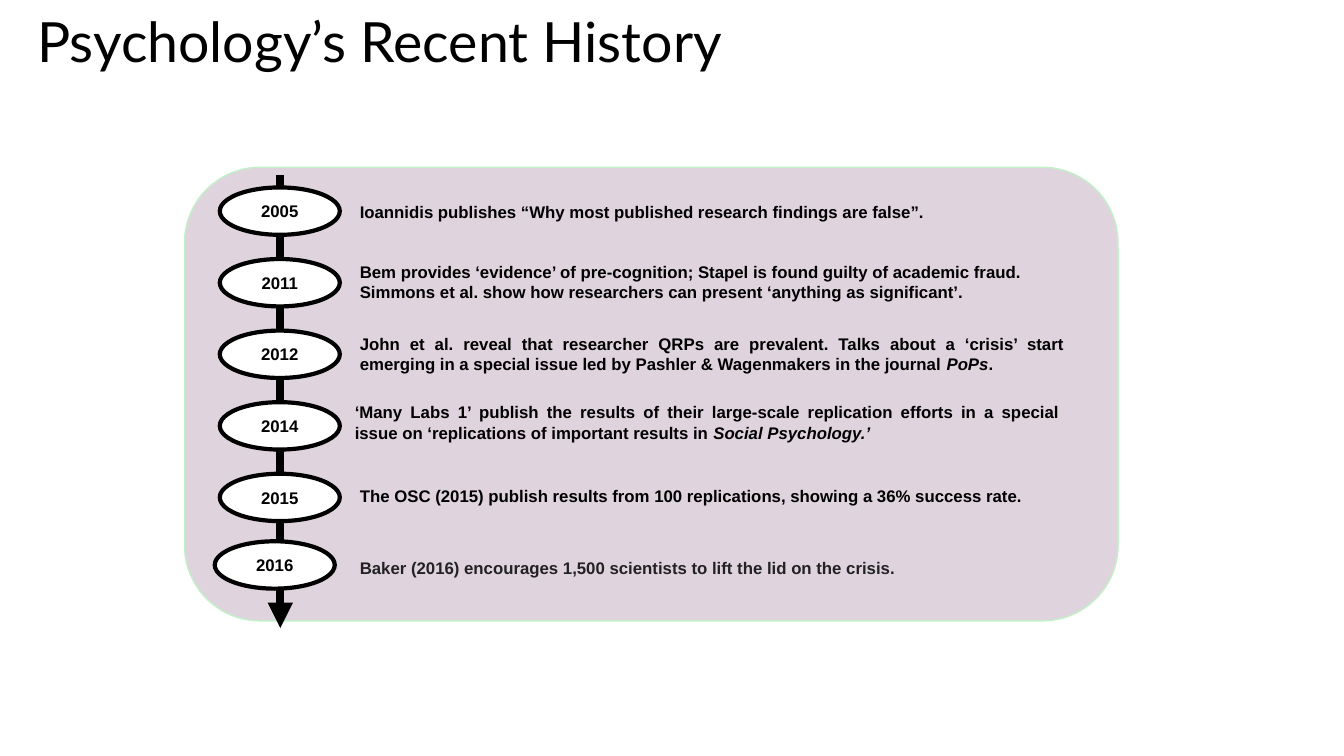
from dataclasses import dataclass

from lxml.etree import SubElement
from pptx import Presentation
from pptx.dml.color import RGBColor
from pptx.enum.shapes import MSO_CONNECTOR as CONNECTOR, MSO_SHAPE as SHAPE
from pptx.enum.text import MSO_ANCHOR as ANCHOR, PP_ALIGN as ALIGN
from pptx.oxml.ns import qn
from pptx.util import Pt

PX = 9144  # EMU per px, 100 px to the inch


@dataclass(frozen=True)
class Theme:
    ink: str = "000000"
    soft_ink: str = "222222"
    white: str = "FFFFFF"
    panel: str = "DFD3DD"
    panel_edge: str = "C2F1C8"
    title_font: str = "Lato"
    body_font: str = "Arial"
    title_size: float = 39.6
    body_size: float = 12


THEME = Theme()
FIRST_YEAR_TOP, YEAR_PITCH = 186, 71
YEAR_LEFT, YEAR_WIDTH, YEAR_HEIGHT = 218, 119, 47


@dataclass(frozen=True)
class Event:
    year: str
    runs: tuple  # (wording, italic)
    box: tuple
    align: ALIGN = ALIGN.JUSTIFY
    color: str = THEME.ink
    year_shift: tuple = (0, 0)


EVENTS = (
    Event("2005", (("Ioannidis publishes “Why most published research findings are false”.", False),),
          (347, 195, 794, 30)),
    Event("2011", (("Bem provides ‘evidence’ of pre-cognition; Stapel is found guilty of academic fraud. "
                    "Simmons et al. show how researchers can present ‘anything as significant’.", False),),
          (347, 255, 719, 50), align=ALIGN.LEFT),
    Event("2012", (("John et al. reveal that researcher QRPs are prevalent. Talks about a ‘crisis’ start "
                    "emerging in a special issue led by Pashler & Wagenmakers in the journal ", False),
                   ("PoPs", True), (".", False)),
          (347, 326, 719, 50)),
    Event("2014", (("‘Many Labs 1’ publish the results of their large-scale replication efforts in a special "
                    "issue on ‘replications of important results in ", False),
                   ("Social Psychology.’", True)),
          (342, 394, 719, 50)),
    Event("2015", (("The OSC (2015) publish results from 100 replications, showing a 36% success rate.", False),),
          (347, 477, 719, 30)),
    Event("2016", (("Baker (2016) encourages 1,500 scientists to lift the lid on the crisis.", False),),
          (347, 548, 804, 30), color=THEME.soft_ink, year_shift=(-5, -4)),
)


def emu(*lengths):
    return [length * PX for length in lengths]


def rgb(color):
    return RGBColor.from_string(color)


def add_run(paragraph, wording, font=THEME.body_font, size=THEME.body_size,
            color=THEME.ink, bold=True, italic=False):
    run = paragraph.add_run()
    run.text = wording
    run.font.name, run.font.size = font, Pt(size)
    run.font.bold, run.font.italic = bold, italic
    run.font.color.rgb = rgb(color)


def add_outlined(slide, kind, box, fill, edge, weight):
    outlined = slide.shapes.add_shape(kind, *emu(*box))
    outlined.shadow.inherit = False
    outlined.fill.solid()
    outlined.fill.fore_color.rgb = rgb(fill)
    outlined.line.color.rgb = rgb(edge)
    outlined.line.width = Pt(weight)
    return outlined


def add_text(slide, box, align=ALIGN.LEFT, anchor=ANCHOR.TOP):
    """Add a wrapping text box and return its first paragraph."""
    frame = slide.shapes.add_textbox(*emu(*box)).text_frame
    frame.word_wrap = True
    frame.vertical_anchor = anchor
    frame.paragraphs[0].alignment = align
    return frame.paragraphs[0]


def add_time_arrow(slide, x, top, bottom):
    arrow = slide.shapes.add_connector(CONNECTOR.STRAIGHT, *emu(x, top, x, bottom))
    arrow.line.color.rgb = rgb(THEME.ink)
    arrow.line.width = Pt(6)
    SubElement(arrow.line._get_or_add_ln(), qn("a:tailEnd"), type="triangle")
    SubElement(arrow._element.spPr, qn("a:effectLst"))


def add_event(slide, row, event):
    shift_x, shift_y = event.year_shift
    year_box = (YEAR_LEFT + shift_x, FIRST_YEAR_TOP + row * YEAR_PITCH + shift_y,
                YEAR_WIDTH, YEAR_HEIGHT)
    year = add_outlined(slide, SHAPE.OVAL, year_box, THEME.white, THEME.ink, 3)
    year.text_frame.vertical_anchor = ANCHOR.MIDDLE
    label = year.text_frame.paragraphs[0]
    label.alignment = ALIGN.CENTER
    add_run(label, event.year)

    story = add_text(slide, event.box, event.align)
    for wording, italic in event.runs:
        add_run(story, wording, color=event.color, italic=italic)


def main():
    deck = Presentation()
    deck.slide_width, deck.slide_height = emu(1333, 750)
    slide = deck.slides.add_slide(deck.slide_layouts[6])

    title = add_text(slide, (27, 16, 786, 57), anchor=ANCHOR.MIDDLE)
    title.line_spacing = 0.9
    add_run(title, "Psychology’s Recent History", THEME.title_font, THEME.title_size, bold=False)

    add_outlined(slide, SHAPE.ROUNDED_RECTANGLE, (183, 166, 926, 450),
                 THEME.panel, THEME.panel_edge, 1)
    add_time_arrow(slide, 278, 174, 623)
    for row, event in enumerate(EVENTS):
        add_event(slide, row, event)

    deck.save("out.pptx")


if __name__ == "__main__":
    main()
